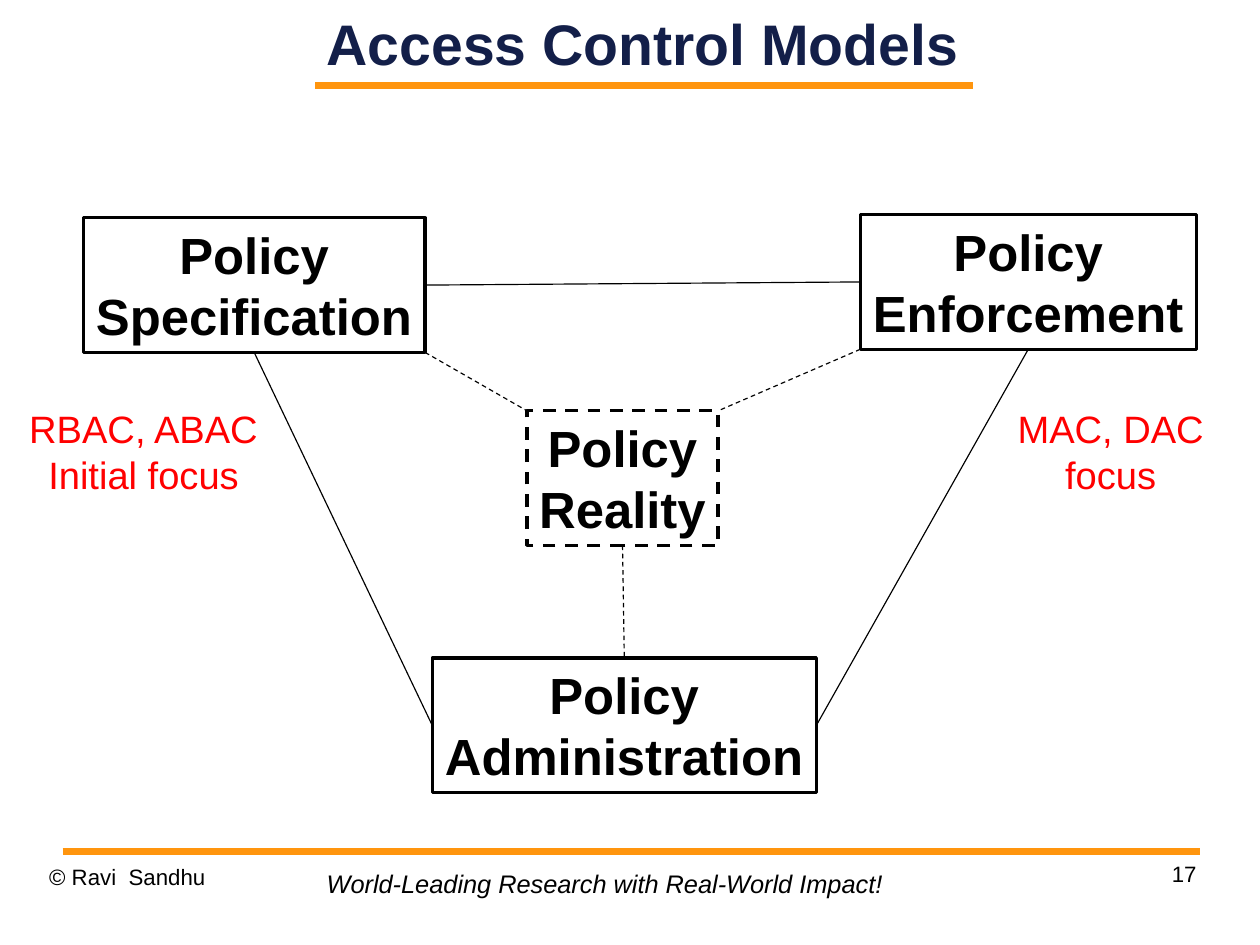
from pptx import Presentation
from pptx.dml.color import RGBColor
from pptx.enum.dml import MSO_LINE
from pptx.enum.shapes import MSO_CONNECTOR, MSO_SHAPE
from pptx.enum.text import MSO_ANCHOR, PP_ALIGN
from pptx.oxml.ns import qn
from pptx.util import Pt
from lxml import etree

# Content: positions are (left, top, width, height) in points
BOXES = {
    "specification": (["Policy", "Specification"], (52.5, 137.2, 215.3, 84.8), False),
    "reality": (["Policy", "Reality"], (332, 258.8, 120.4, 84.8), True),
    "enforcement": (["Policy", "Enforcement"], (542, 135.2, 211.6, 84.8), False),
    "administration": (["Policy", "Administration"], (272.3, 414.5, 242, 84.8), False),
}
TOP, LEFT, BOTTOM, RIGHT = range(4)
SIDE_LINKS = [  # box, side, box, side, dashed
    ("specification", BOTTOM, "administration", LEFT, False),
    ("specification", RIGHT, "enforcement", LEFT, False),
    ("enforcement", BOTTOM, "administration", RIGHT, False),
    ("reality", BOTTOM, "administration", TOP, True),
]
CORNER_LINKS = [  # box, its corner, corner of the reality box (x, y as 0 or 1)
    ("specification", (1, 1), (0, 0)),
    ("enforcement", (0, 1), (1, 0)),
]
RULES = [(198.7, 613, 54), (39.4, 756, 536.3)]  # x1, x2, y
L, C, R = PP_ALIGN.LEFT, PP_ALIGN.CENTER, PP_ALIGN.RIGHT
TEXTS = [  # lines, position, style, alignment, inset
    (["Access Control Models"], (173.3, 0, 463, 54), "title", C, False),
    (["RBAC, ABAC", "Initial focus"], (7.7, 251.8, 165.5, 65.5), "note", C, True),
    (["MAC, DAC", "focus"], (622.7, 251.8, 154, 65.5), "note", C, True),
    (["© Ravi  Sandhu"], (31, 543.5, 185, 41), "footer", L, False),
    (["World-Leading Research with Real-World Impact!"],
     (198.7, 543.5, 366, 26.6), "motto", L, True),
    (["17"], (568.8, 542, 185, 41), "footer", R, False),
]

THEME = {
    "font": "Arial",
    "line": "000000",
    "rule": "FF950E",
    "styles": {  # size, colour, bold, italic
        "title": (36, "131F49", True, False),
        "box": (32, "000000", True, False),
        "note": (24, "FF0000", False, False),
        "footer": (14, "000000", False, False),
        "motto": (16, "000000", False, True),
    },
}

prs = Presentation()
prs.slide_width, prs.slide_height = Pt(793.75), Pt(595.25)
s = prs.slides.add_slide(prs.slide_layouts[6])


def write(tf, lines, style, align):
    size, color, bold, italic = THEME["styles"][style]
    for i, line in enumerate(lines):
        p = tf.paragraphs[0] if i == 0 else tf.add_paragraph()
        p.alignment = align
        r = p.add_run()
        r.text = line
        f = r.font
        f.name, f.size, f.bold, f.italic = THEME["font"], Pt(size), bold, italic
        f.color.rgb = RGBColor.from_string(color)


def style_line(line, color, width, dashed=False):
    line.color.rgb = RGBColor.from_string(color)
    line.width = Pt(width)
    if dashed:
        line.dash_style = MSO_LINE.DASH


def connect(x1, y1, x2, y2, color, width, dashed=False):
    cx = s.shapes.add_connector(MSO_CONNECTOR.STRAIGHT, Pt(x1), Pt(y1), Pt(x2), Pt(y2))
    style_line(cx.line, color, width, dashed)
    etree.SubElement(cx._element.spPr, qn("a:effectLst"))
    return cx


def corner(name, fx, fy):
    x, y, w, h = BOXES[name][1]
    return x + fx * w, y + fy * h


# Orange rules
for x1, x2, y in RULES:
    connect(x1, y, x2, y, THEME["rule"], 4.31)

# Title, notes and footer
for lines, pos, style, align, inset in TEXTS:
    tf = s.shapes.add_textbox(*map(Pt, pos)).text_frame
    tf.word_wrap = style != "motto"
    if not inset:
        tf.margin_left = tf.margin_right = tf.margin_top = tf.margin_bottom = 0
    if style == "title":
        tf.vertical_anchor = MSO_ANCHOR.MIDDLE
    write(tf, lines, style, align)

# Policy boxes
shapes = {}
for name, (lines, pos, dashed) in BOXES.items():
    sp = s.shapes.add_shape(MSO_SHAPE.RECTANGLE, *map(Pt, pos))
    sp.shadow.inherit = False
    sp.fill.background()
    style_line(sp.line, THEME["line"], 2, dashed)
    tf = sp.text_frame
    tf.word_wrap = False
    tf.vertical_anchor = MSO_ANCHOR.TOP
    write(tf, lines, "box", C)
    shapes[name] = sp

# Links between side middles
for a, side_a, b, side_b, dashed in SIDE_LINKS:
    cx = connect(0, 0, 0, 0, THEME["line"], 0.75, dashed)
    cx.begin_connect(shapes[a], side_a)
    cx.end_connect(shapes[b], side_b)

# Links between corners
for name, start, end in CORNER_LINKS:
    connect(*corner(name, *start), *corner("reality", *end), THEME["line"], 0.75, True)

prs.save("out.pptx")
